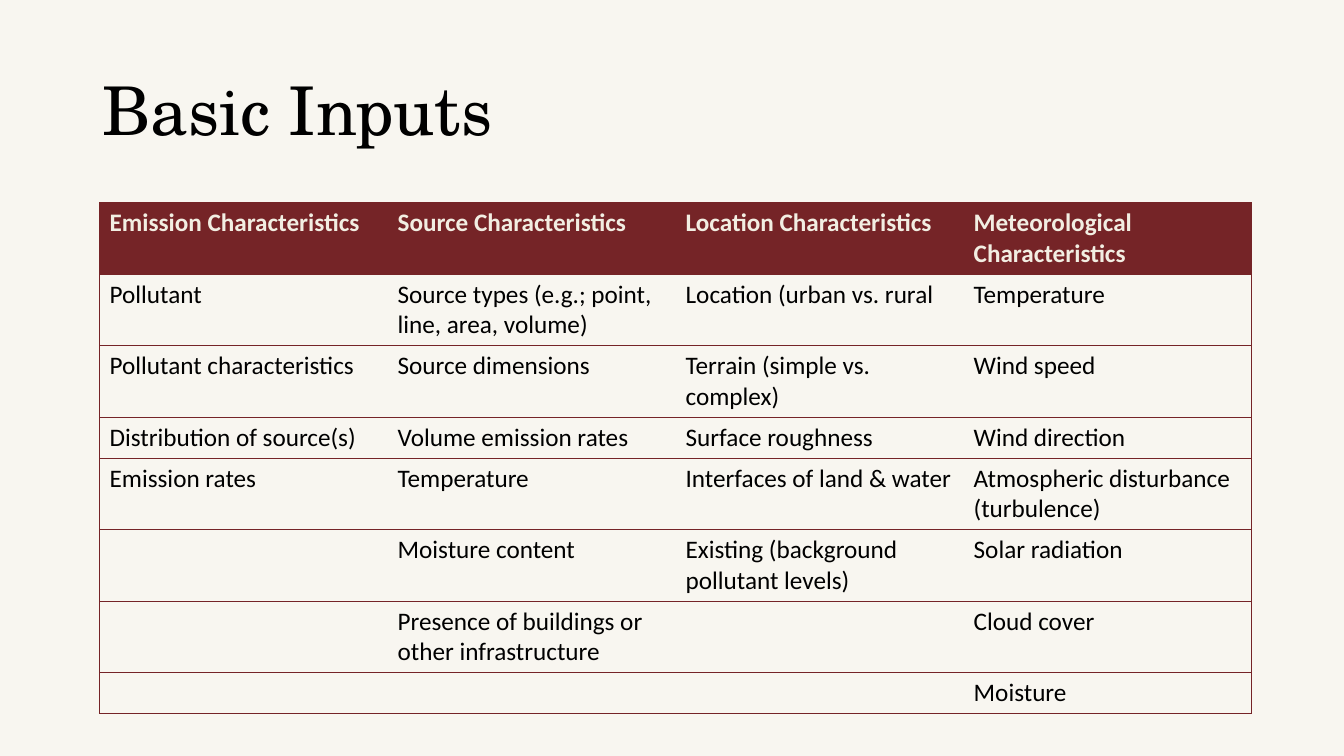
from lxml.etree import SubElement
from pptx import Presentation
from pptx.dml.color import RGBColor
from pptx.enum.text import MSO_ANCHOR
from pptx.oxml.ns import qn
from pptx.util import Pt

TITLE = "Basic Inputs"
HEADS = ["Emission Characteristics", "Source Characteristics",
         "Location Characteristics", "Meteorological Characteristics"]
ROWS = [
    ["Pollutant", "Source types (e.g.; point, line, area, volume)",
     "Location (urban vs. rural", "Temperature"],
    ["Pollutant characteristics", "Source dimensions",
     "Terrain (simple vs. complex)", "Wind speed"],
    ["Distribution of source(s)", "Volume emission rates",
     "Surface roughness", "Wind direction"],
    ["Emission rates", "Temperature",
     "Interfaces of land & water", "Atmospheric disturbance (turbulence)"],
    ["", "Moisture content",
     "Existing (background pollutant levels)", "Solar radiation"],
    ["", "Presence of buildings or other infrastructure", "", "Cloud cover"],
    ["", "", "", "Moisture"],
]
COLORS = {"back": "F8F6F0", "head": "F2EEE2", "wine": "752427", "ink": "000000"}
FONTS = {"title": "TeX Gyre Schola", "body": "Calibri"}
LEFT, TOP, WIDE = 71.1, 144.7, 205.75
TALL, SHORT = 51.1, 29.2
SHORT_ROWS = {3, 7}


def paint(name):
    return RGBColor.from_string(COLORS[name])


def write(para, text, font, size, color, bold=False):
    run = para.add_run()
    run.text = text
    run.font.name = FONTS[font]
    run.font.size = Pt(size)
    run.font.bold = bold
    run.font.color.rgb = paint(color)


def edge(cell, side, shown):
    line = SubElement(cell._tc.get_or_add_tcPr(), qn("a:ln" + side),
                      w=str(Pt(0.5)))
    if shown:
        fill = SubElement(line, qn("a:solidFill"))
        SubElement(fill, qn("a:srgbClr"), val=COLORS["wine"])
    else:
        SubElement(line, qn("a:noFill"))


def add_title(slide):
    box = slide.shapes.add_textbox(Pt(66), Pt(28.8), Pt(828), Pt(104.4))
    frame = box.text_frame
    frame.word_wrap = True
    frame.vertical_anchor = MSO_ANCHOR.MIDDLE
    para = frame.paragraphs[0]
    para.line_spacing = 0.9
    write(para, TITLE, "title", 48, "ink")


def add_grid(slide):
    data = [HEADS] + ROWS
    highs = [SHORT if r in SHORT_ROWS else TALL for r in range(len(data))]
    last = len(HEADS) - 1
    table = slide.shapes.add_table(
        len(data), len(HEADS), Pt(LEFT), Pt(TOP),
        Pt(WIDE * len(HEADS)), Pt(sum(highs))).table
    table.first_row = table.horz_banding = False
    for col in table.columns:
        col.width = Pt(WIDE)
    for r, texts in enumerate(data):
        table.rows[r].height = Pt(highs[r])
        for c, text in enumerate(texts):
            cell = table.cell(r, c)
            para = cell.text_frame.paragraphs[0]
            if text:
                write(para, text, "body", 18, "ink" if r else "head", r == 0)
            else:
                para.font.size = Pt(18)
            for side, shown in (("L", c == 0), ("R", c == last),
                                ("T", True), ("B", True)):
                edge(cell, side, shown)
            if r:
                cell.fill.background()
            else:
                cell.fill.solid()
                cell.fill.fore_color.rgb = paint("wine")


def main():
    """Build the slide of basic model inputs."""
    deck = Presentation()
    deck.slide_width, deck.slide_height = Pt(960), Pt(540)
    slide = deck.slides.add_slide(deck.slide_layouts[6])
    slide.background.fill.solid()
    slide.background.fill.fore_color.rgb = paint("back")
    add_title(slide)
    add_grid(slide)
    deck.save("out.pptx")


if __name__ == "__main__":
    main()
